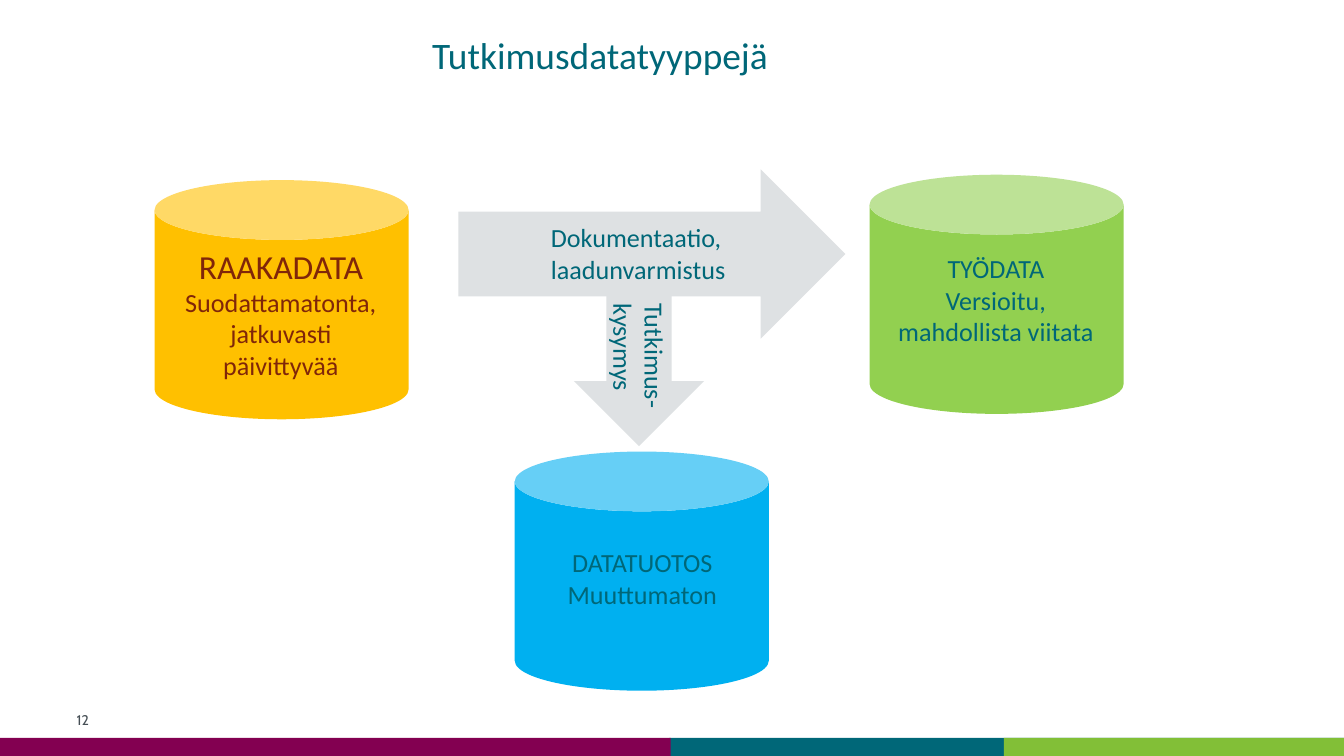
import pptx
import pptx.util
import pptx.dml.color
import pptx.enum.shapes
import pptx.enum.text

Inches = pptx.util.Inches
Pt = pptx.util.Pt
SHAPE = pptx.enum.shapes.MSO_SHAPE
ANCHOR = pptx.enum.text.MSO_ANCHOR
LEFT = pptx.enum.text.PP_ALIGN.LEFT
CENTER = pptx.enum.text.PP_ALIGN.CENTER
TEAL = "006778"
GREY = "DEE1E3"


def color(value):
    return pptx.dml.color.RGBColor.from_string(value)


def write(box, lines, ink=TEAL, align=CENTER, font="Calibri", **frame_format):
    frame = box.text_frame
    settings = {"word_wrap": True, "vertical_anchor": ANCHOR.TOP, **frame_format}
    for name, value in settings.items():
        setattr(frame, name, value)
    for index, (words, size) in enumerate(lines):
        paragraph = frame.add_paragraph() if index else frame.paragraphs[0]
        paragraph.alignment = align
        run = paragraph.add_run()
        run.text = words
        for name, value in {"name": font, "size": Pt(size), "bold": False}.items():
            setattr(run.font, name, value)
        run.font.color.rgb = color(ink)


deck = pptx.Presentation()
deck.slide_width = Inches(10)
deck.slide_height = Inches(10) * 9 // 16
slide = deck.slides.add_slide(deck.slide_layouts[5])

title = slide.shapes.title
title_place = {"left": 1.42, "top": 0.19, "width": 6.09, "height": 0.44}
for name, value in title_place.items():
    setattr(title, name, Inches(value))
write(title, [("Tutkimusdatatyyppejä", 20)])

solids = [
    (SHAPE.RECTANGLE, (4.98, 5.49, 5.02, 0.14), TEAL),
    (SHAPE.RECTANGLE, (7.47, 5.49, 2.53, 0.14), "82BF37"),
    (SHAPE.RECTANGLE, (0, 5.49, 4.99, 0.14), "830051"),
    (SHAPE.CAN, (1.15, 1.34, 1.89, 1.78), "FFC000"),
    (SHAPE.CAN, (6.47, 1.3, 1.89, 1.78), "92D050"),
    (SHAPE.CAN, (3.83, 3.36, 1.89, 1.78), "00B0F0"),
    (SHAPE.RIGHT_ARROW, (3.41, 1.26, 2.88, 1.26), GREY),
    (SHAPE.DOWN_ARROW, (4.27, 2.2, 0.97, 1.12), GREY),
]
for preset, place, fill in solids:
    solid = slide.shapes.add_shape(preset, *map(Inches, place))
    solid.shadow.inherit = False
    solid.fill.solid()
    solid.fill.fore_color.rgb = color(fill)
    solid.line.fill.background()

labels = [
    ((1.22, 1.78, 1.74, 1.11), 0,
     [("RAAKADATA", 18), ("Suodattamatonta, jatkuvasti päivittyvää", 14)],
     {"ink": "802609"}),
    ((6.54, 1.83, 1.74, 0.81), 0,
     [("TYÖDATA", 14), ("Versioitu, mahdollista viitata", 14)], {}),
    ((3.91, 4.02, 1.74, 0.57), 0,
     [("DATATUOTOS", 14), ("Muuttumaton", 14)], {}),
    ((4, 1.6, 2.01, 0.57), 0,
     [("Dokumentaatio, laadunvarmistus", 14)], {"align": LEFT}),
    ((4.25, 2.38, 1.01, 0.57), 90,
     [("Tutkimus-", 14), ("kysymys", 14)], {"align": LEFT, "word_wrap": False}),
    ((0.5, 5.23, 0.71, 0.26), 0, [("12", 7.5)],
     {"ink": "464F55", "align": LEFT, "font": "Cabin",
      "vertical_anchor": ANCHOR.MIDDLE,
      "margin_left": Inches(0.07), "margin_right": Inches(0.07),
      "margin_top": Inches(0.04), "margin_bottom": Inches(0.04)}),
]
for place, angle, lines, label_format in labels:
    label = slide.shapes.add_textbox(*map(Inches, place))
    label.rotation = angle
    write(label, lines, **label_format)

deck.save("out.pptx")
